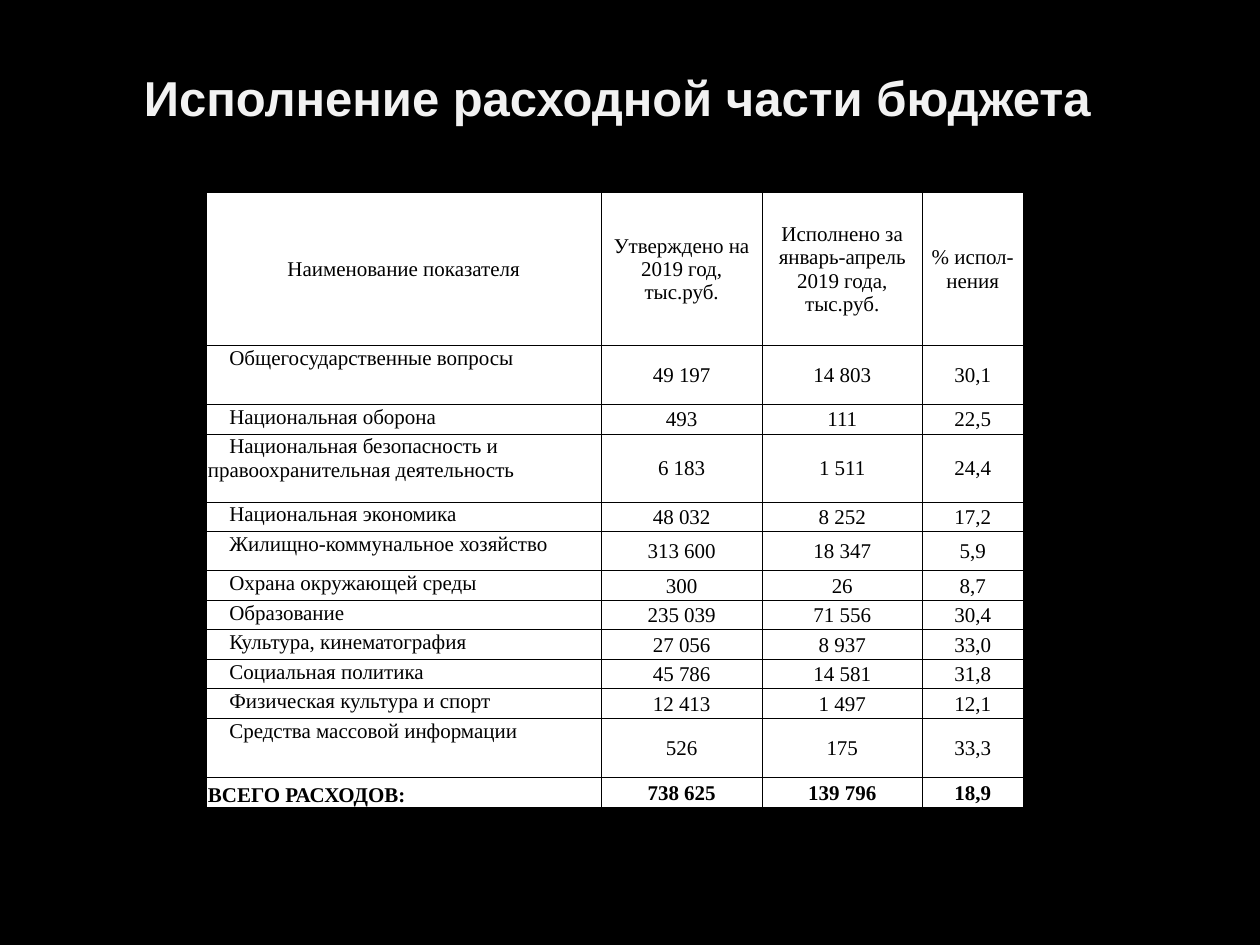
from dataclasses import dataclass

from lxml.etree import SubElement
from pptx import Presentation
from pptx.dml.color import RGBColor
from pptx.enum.text import MSO_ANCHOR, PP_ALIGN
from pptx.oxml.ns import qn
from pptx.util import Inches, Pt

BLACK, WHITE, PALE = "000000", "FFFFFF", "F2F2F2"
LINE = 0.47 / 2  # height of a one-line row
COLS = (3.13, 1.28, 1.27, 0.8)
HEAD = ("Наименование показателя", "Утверждено на 2019 год, тыс.руб.",
        "Исполнено за январь-апрель 2019 года, тыс.руб.", "% испол-нения")


@dataclass
class Row:
    name: str
    plan: str
    done: str
    rate: str
    high: float = LINE

    def texts(self) -> tuple:
        return self.name, self.plan, self.done, self.rate


ROWS = [
    Row(*HEAD, 1.21),
    Row("Общегосударственные вопросы", "49 197", "14 803", "30,1", 2 * LINE),
    Row("Национальная оборона", "493", "111", "22,5"),
    Row("Национальная безопасность и правоохранительная деятельность",
        "6 183", "1 511", "24,4", 0.54),
    Row("Национальная экономика", "48 032", "8 252", "17,2"),
    Row("Жилищно-коммунальное хозяйство", "313 600", "18 347", "5,9", 0.31),
    Row("Охрана окружающей среды", "300", "26", "8,7"),
    Row("Образование", "235 039", "71 556", "30,4"),
    Row("Культура, кинематография", "27 056", "8 937", "33,0"),
    Row("Социальная политика", "45 786", "14 581", "31,8"),
    Row("Физическая культура и спорт", "12 413", "1 497", "12,1"),
    Row("Средства массовой информации", "526", "175", "33,3", 2 * LINE),
    Row("ВСЕГО РАСХОДОВ:", "738 625", "139 796", "18,9"),
]


def paint(fill, tone: str) -> None:
    fill.solid()
    fill.fore_color.rgb = RGBColor.from_string(tone)


def write(frame, text: str, face: str, size: float, tone: str,
          bold: bool, align: PP_ALIGN) -> None:
    para = frame.paragraphs[0]
    para.alignment = align
    run = para.add_run()
    run.text = text
    run.font.name = face
    run.font.size = Pt(size)
    run.font.bold = bold
    run.font.color.rgb = RGBColor.from_string(tone)


def frame_cell(cell) -> None:
    """Thin black border on all four sides; call before filling the cell."""
    props = cell._tc.get_or_add_tcPr()
    for side in ("a:lnL", "a:lnR", "a:lnT", "a:lnB"):
        line = SubElement(props, qn(side), w=str(Pt(0.5)))
        solid = SubElement(line, qn("a:solidFill"))
        SubElement(solid, qn("a:srgbClr"), val=BLACK)


def draw_cell(cell, text: str, anchor: MSO_ANCHOR, align: PP_ALIGN,
              bold: bool, indent: float) -> None:
    frame_cell(cell)
    paint(cell.fill, WHITE)
    cell.margin_left = cell.margin_right = cell.margin_top = Inches(0.01)
    cell.margin_bottom = 0
    cell.vertical_anchor = anchor
    write(cell.text_frame, text, "Times New Roman", 12, BLACK, bold, align)
    if indent:
        props = cell.text_frame.paragraphs[0]._p.get_or_add_pPr()
        props.set("indent", str(Inches(indent)))


def draw_title(slide) -> None:
    box = slide.shapes.add_textbox(Inches(0.5), Inches(0.29),
                                   Inches(9), Inches(0.96))
    frame = box.text_frame
    frame.word_wrap = True
    frame.vertical_anchor = MSO_ANCHOR.MIDDLE
    frame.margin_right = Inches(0.3)
    write(frame, "Исполнение расходной части бюджета", "Arial", 28, PALE,
          True, PP_ALIGN.CENTER)


def draw_table(slide) -> None:
    high = sum(row.high for row in ROWS)
    table = slide.shapes.add_table(len(ROWS), len(COLS), Inches(1.64),
                                   Inches(1.53), Inches(sum(COLS)),
                                   Inches(high)).table
    table.horz_banding = False
    for col, wide in zip(table.columns, COLS):
        col.width = Inches(wide)
    last = len(ROWS) - 1
    for r, row in enumerate(ROWS):
        table.rows[r].height = Inches(row.high)
        for c, text in enumerate(row.texts()):
            anchor, align, indent = MSO_ANCHOR.MIDDLE, PP_ALIGN.CENTER, 0
            if c == 0 and r == last:
                anchor, align = MSO_ANCHOR.BOTTOM, PP_ALIGN.LEFT
            elif c == 0 and r > 0:
                anchor, align, indent = MSO_ANCHOR.TOP, PP_ALIGN.LEFT, 0.17
            draw_cell(table.cell(r, c), text, anchor, align, r == last, indent)


def main() -> None:
    deck = Presentation()
    deck.slide_width, deck.slide_height = Inches(10), Inches(7.5)
    slide = deck.slides.add_slide(deck.slide_layouts[6])
    paint(slide.background.fill, BLACK)
    # Heading
    draw_title(slide)
    # Budget table
    draw_table(slide)
    deck.save("out.pptx")


if __name__ == "__main__":
    main()
